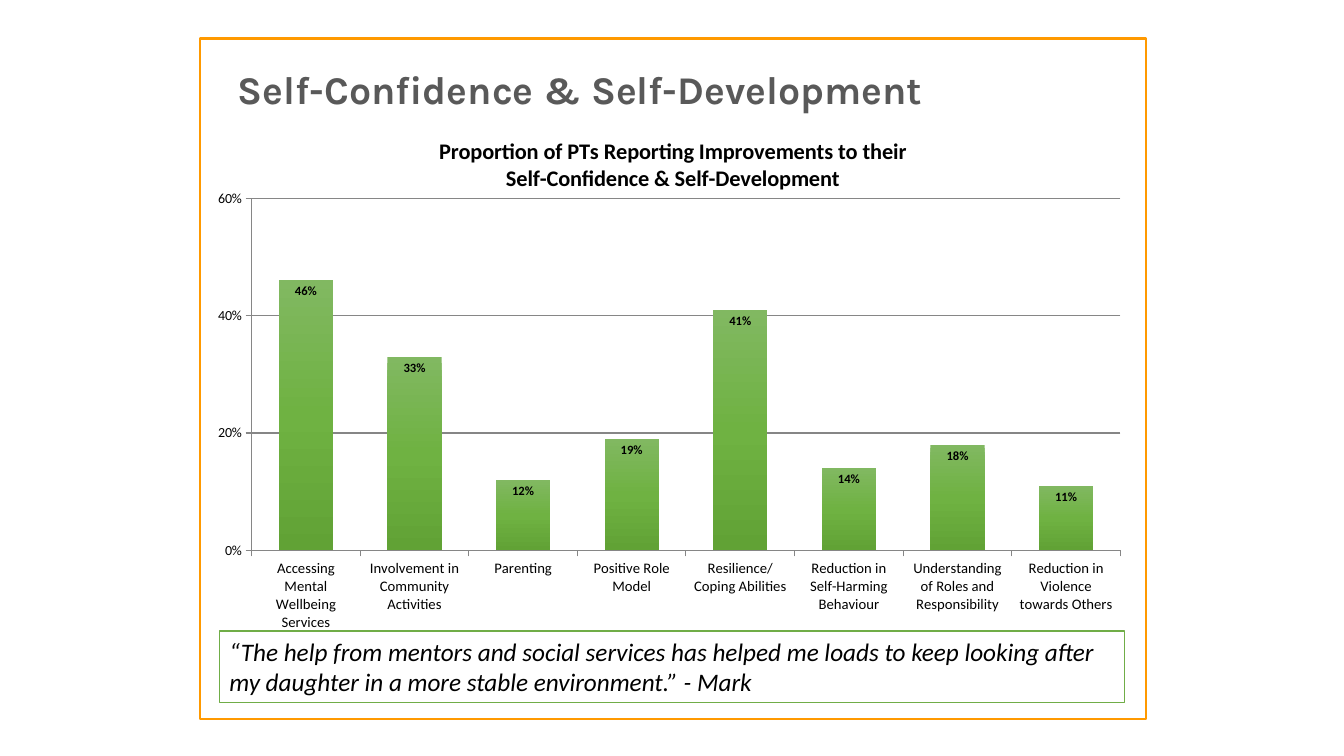
from copy import deepcopy

from lxml import etree
from pptx import Presentation
from pptx.chart.data import CategoryChartData as Data
from pptx.dml.color import RGBColor
from pptx.enum.chart import XL_CHART_TYPE as Kind, XL_LABEL_POSITION as Spot, XL_TICK_MARK as Tick
from pptx.enum.shapes import MSO_SHAPE as Form
from pptx.enum.text import MSO_ANCHOR as Anchor, PP_ALIGN as Align
from pptx.oxml.ns import qn
from pptx.util import Cm, Pt

RATES = {
    "Accessing Mental Wellbeing Services": 0.46,
    "Involvement in Community Activities": 0.33,
    "Parenting": 0.12,
    "Positive Role Model": 0.19,
    "Resilience/Coping Abilities": 0.41,
    "Reduction in Self-Harming Behaviour": 0.14,
    "Understanding of Roles and Responsibility": 0.18,
    "Reduction in Violence towards Others": 0.11,
}
HEAD = ["Proportion of PTs Reporting Improvements to their", "Self-Confidence & Self-Development"]
QUOTE = ("“The help from mentors and social services has helped me loads to keep looking "
         "after my daughter in a more stable environment.” - Mark")
GREENS = [("81B861", 0), ("6FB242", 0.5), ("61A235", 1)]


def tint(code):
    return RGBColor.from_string(code)


def style(font, size, color="000000", name="Calibri", bold=False, italic=False):
    font.size, font.name, font.bold, font.italic = Pt(size), name, bold, italic
    font.color.rgb = tint(color)


def write(frame, text, **look):
    frame.word_wrap = True
    frame.text = text
    para = frame.paragraphs[0]
    para.alignment = Align.LEFT
    style(para.runs[0].font, **look)


def add_frame(slide, box, edge, width, fill=None):
    rect = slide.shapes.add_shape(Form.RECTANGLE, *map(Cm, box))
    rect.shadow.inherit = False
    rect.line.color.rgb = tint(edge)
    rect.line.width = Pt(width)
    if fill:
        rect.fill.solid()
        rect.fill.fore_color.rgb = tint(fill)
    else:
        rect.fill.background()
    return rect


def add_title(slide, box):
    label = slide.shapes.add_textbox(*map(Cm, box))
    write(label.text_frame, "Self-Confidence & Self-Development",
          size=28, color="595959", name="Karla", bold=True)


def add_quote(slide, box):
    rect = add_frame(slide, box, "70AD47", 1, "FFFFFF")
    rect.text_frame.vertical_anchor = Anchor.MIDDLE
    write(rect.text_frame, QUOTE, size=18, italic=True)


def shade(fill):
    fill.gradient()
    fill.gradient_angle = 270
    stops = fill.gradient_stops
    first = stops[0]._gs
    first.addnext(deepcopy(first))
    for stop, (code, place) in zip(fill.gradient_stops, GREENS):
        stop.color.rgb = tint(code)
        stop.position = place


def set_plot(chart, box):
    area = chart._chartSpace.chart.plotArea
    for old in area.findall(qn("c:layout")):
        area.remove(old)
    layout = etree.Element(qn("c:layout"))
    area.insert(0, layout)
    manual = etree.SubElement(layout, qn("c:manualLayout"))
    parts = [("layoutTarget", "inner"), ("xMode", "edge"), ("yMode", "edge"), *zip("xywh", box)]
    for tag, val in parts:
        etree.SubElement(manual, qn("c:" + tag)).set("val", str(val))


def set_axes(chart):
    for axis, size in ((chart.category_axis, 10.5), (chart.value_axis, 10)):
        style(axis.tick_labels.font, size)
        axis.major_tick_mark = Tick.OUTSIDE
        axis.minor_tick_mark = Tick.NONE
        axis.format.line.color.rgb = tint("868686")
    axis = chart.value_axis
    axis.minimum_scale, axis.maximum_scale, axis.major_unit = 0, 0.6, 0.2
    axis.tick_labels.number_format = "0%"
    axis.tick_labels.number_format_is_linked = False
    axis.major_gridlines.format.line.color.rgb = tint("868686")


def add_bars(slide, box):
    data = Data(number_format="0%")
    data.categories = list(RATES)
    data.add_series("Series 1", list(RATES.values()))
    chart = slide.shapes.add_chart(Kind.COLUMN_CLUSTERED, *map(Cm, box), data).chart
    style(chart.font, 10)
    chart.has_legend = False
    chart.has_title = True
    frame = chart.chart_title.text_frame
    frame.text = "\n".join(HEAD)
    for para in frame.paragraphs:
        style(para.runs[0].font, 16, bold=True)
    set_plot(chart, (0.055, 0.157, 0.918, 0.69))
    set_axes(chart)
    plot = chart.plots[0]
    plot.gap_width = 100
    plot.vary_by_categories = False
    shade(plot.series[0].format.fill)
    plot.has_data_labels = True
    labels = plot.data_labels
    labels.show_value = True
    labels.position = Spot.INSIDE_END
    labels.number_format = "0%"
    labels.number_format_is_linked = False
    style(labels.font, 9, bold=True)


def add_page(deck, box):
    slide = deck.slides.add_slide(deck.slide_layouts[6])
    left, top, width, height = box
    add_frame(slide, box, "FF9900", 1.5)
    add_title(slide, (left + 0.71, top + 0.56, 22.2, 1.45))
    add_bars(slide, (left, top + 2.01, width, 12.93))
    add_quote(slide, (left + 0.5, top + 14.93, width - 1.04, 1.8))


def main():
    deck = Presentation()
    deck.slide_width, deck.slide_height = Cm(33.87), Cm(19.05)
    add_page(deck, (5.03, 0.97, 23.85, 17.15))
    deck.save("out.pptx")


if __name__ == "__main__":
    main()
